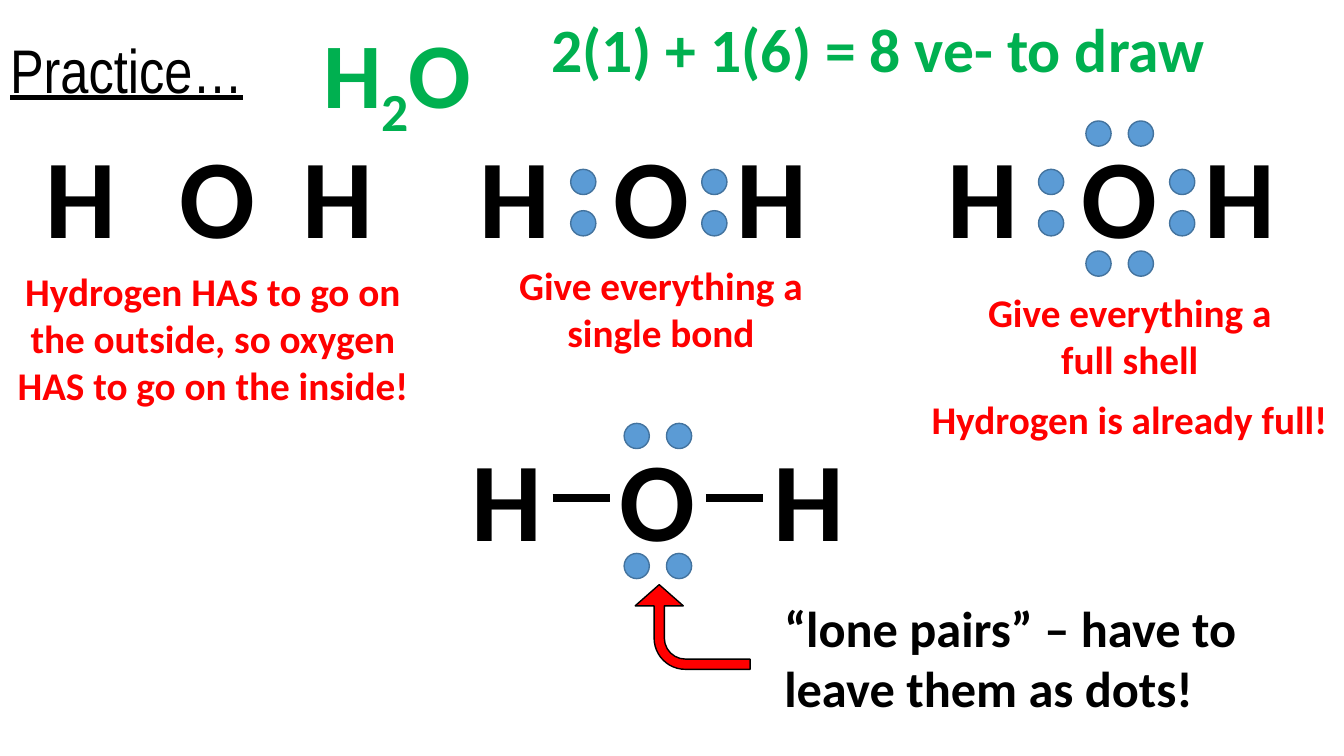
from dataclasses import dataclass

from lxml import etree
from pptx import Presentation
from pptx.dml.color import RGBColor
from pptx.enum.shapes import MSO_CONNECTOR, MSO_SHAPE
from pptx.enum.text import MSO_ANCHOR, MSO_AUTO_SIZE, PP_ALIGN
from pptx.oxml.ns import qn
from pptx.util import Inches, Pt

LEFT, CENTER = PP_ALIGN.LEFT, PP_ALIGN.CENTER
MIDDLE = MSO_ANCHOR.MIDDLE
GROW = MSO_AUTO_SIZE.SHAPE_TO_FIT_TEXT
NO_FIT = MSO_AUTO_SIZE.NONE
OVAL, BENT_ARROW = MSO_SHAPE.OVAL, MSO_SHAPE.BENT_ARROW
STRAIGHT = MSO_CONNECTOR.STRAIGHT


@dataclass(frozen=True)
class Theme:
    """Colours, fonts and type sizes of the slide."""

    black: RGBColor = RGBColor(0x00, 0x00, 0x00)
    green: RGBColor = RGBColor(0x00, 0xB0, 0x50)
    red: RGBColor = RGBColor(0xFF, 0x00, 0x00)
    electron: RGBColor = RGBColor(0x5B, 0x9B, 0xD5)
    electron_edge: RGBColor = RGBColor(0x43, 0x73, 0x9E)
    title_font: str = "Arial Narrow"
    body_font: str = "Calibri"
    atom_size: int = 80
    formula_size: int = 66
    title_size: int = 44
    callout_size: int = 36
    note_size: int = 28


THEME = Theme()


def place(shape, box):
    """Move and size a shape to a (left, top, width, height) box."""
    shape.left, shape.top, shape.width, shape.height = map(Inches, box)


def format_run(run, size, color, font=THEME.body_font, bold=True):
    """Apply type settings to a run."""
    run.font.name = font
    run.font.size = Pt(size)
    run.font.bold = bold
    run.font.color.rgb = color


def add_text(slide, box, text, size, color, alignment=LEFT):
    """Add a wrapping bold text box and return its paragraph."""
    frame = slide.shapes.add_textbox(*map(Inches, box)).text_frame
    frame.word_wrap = True
    frame.auto_size = GROW
    paragraph = frame.paragraphs[0]
    paragraph.text = text
    paragraph.alignment = alignment
    for run in paragraph.runs:
        format_run(run, size, color)
    return paragraph


def add_filled(slide, preset, box, fill, edge):
    """Add a filled preset shape with a thin outline."""
    shape = slide.shapes.add_shape(preset, *map(Inches, box))
    shape.shadow.inherit = False
    shape.fill.solid()
    shape.fill.fore_color.rgb = fill
    shape.line.color.rgb = edge
    shape.line.width = Pt(1)
    return shape


def add_electrons(slide, left, top, columns, rows):
    """Add electron dots at every crossing of the column and row offsets."""
    for column in columns:
        for row in rows:
            add_filled(slide, OVAL, (left + column, top + row, 0.25, 0.25),
                       THEME.electron, THEME.electron_edge)


def add_bond(slide, left, top, length):
    """Add a thick horizontal bond line."""
    bond = slide.shapes.add_connector(
        STRAIGHT, Inches(left), Inches(top), Inches(left + length), Inches(top))
    bond.line.color.rgb = THEME.black
    bond.line.width = Pt(6)
    etree.SubElement(bond.element.spPr, qn("a:effectLst"))


def add_water(slide, left, top, oxygen=1.33, hydrogen=2.55,
              shared_pairs=False, lone_pairs=False, bonds=False):
    """Draw H, O and H from a left edge, with the chosen electrons and bonds."""
    for symbol, offset in (("H", 0), ("O", oxygen), ("H", hydrogen)):
        add_text(slide, (left + offset, top, 1.33, 1.45), symbol,
                 THEME.atom_size, THEME.black)
    if shared_pairs:
        add_electrons(slide, left, top, (1, 2.3), (0.47, 0.88))
    if lone_pairs:
        add_electrons(slide, left + oxygen, top, (0.14, 0.56), (-0.01, 1.28))
    if bonds:
        for offset in (-0.57, 0.95):
            add_bond(slide, left + oxygen + offset, top + 0.73, 0.57)


def add_note(slide, box, text):
    """Add a centred red explanation."""
    add_text(slide, box, text, THEME.note_size, THEME.red, CENTER)


def add_title(slide, box):
    """Format the title placeholder."""
    title = slide.shapes.title
    place(title, box)
    frame = title.text_frame
    frame.text = "Practice…"
    frame.auto_size = NO_FIT
    frame.vertical_anchor = MIDDLE
    paragraph = frame.paragraphs[0]
    paragraph.alignment = LEFT
    paragraph.line_spacing = 0.9
    run = paragraph.runs[0]
    format_run(run, THEME.title_size, THEME.black, THEME.title_font, False)
    run.font.underline = True


def add_formula(slide, box):
    """Add the water formula with its subscript."""
    paragraph = add_text(slide, box, "H", THEME.formula_size, THEME.green)
    for text in ("2", "O"):
        run = paragraph.add_run()
        run.text = text
        format_run(run, THEME.formula_size, THEME.green)
        if text == "2":
            run.font._element.set("baseline", "-25000")


def add_lone_pair_callout(slide, left, top):
    """Add the bent arrow and its remark below the finished structure."""
    arrow = add_filled(slide, BENT_ARROW, (left, top, 0.84, 1.14),
                       THEME.red, THEME.black)
    arrow.rotation = 270
    for index, value in enumerate((0.121, 0.284, 0.25, 0.369)):
        arrow.adjustments[index] = value
    add_text(slide, (left + 1.23, top + 0.22, 5.22, 1.31),
             "“lone pairs” – have to leave them as dots!",
             THEME.callout_size, THEME.black)


def build_practice_slide(presentation):
    """Build the slide that works through the dots of water."""
    slide = presentation.slides.add_slide(presentation.slide_layouts[5])
    add_title(slide, (0, 0, 12.42, 1.45))
    add_formula(slide, (3.11, 0.11, 1.85, 1.21))
    add_text(slide, (5.37, 0.06, 7.54, 0.84), "2(1) + 1(6) = 8 ve- to draw",
             THEME.title_size, THEME.green)

    add_water(slide, 0.35, 1.21)
    add_note(slide, (-0.05, 2.6, 4.32, 1.51),
             "Hydrogen HAS to go on the outside, so oxygen HAS to go on the inside!")

    add_water(slide, 4.66, 1.21, shared_pairs=True)
    add_note(slide, (4.58, 2.54, 3.95, 1.04), "Give everything a single bond")

    add_water(slide, 9.3, 1.21, shared_pairs=True, lone_pairs=True)
    add_note(slide, (9.5, 2.81, 3.41, 1.04), "Give everything a full shell")
    add_note(slide, (9.05, 3.87, 4.3, 0.57), "Hydrogen is already full!")

    add_water(slide, 4.58, 4.21, oxygen=1.47, hydrogen=2.99,
              lone_pairs=True, bonds=True)
    add_lone_pair_callout(slide, 6.45, 5.65)


def main():
    """Create and save the presentation."""
    presentation = Presentation()
    presentation.slide_width = Inches(13.33)
    presentation.slide_height = Inches(7.5)
    build_practice_slide(presentation)
    presentation.save("out.pptx")


if __name__ == "__main__":
    main()
